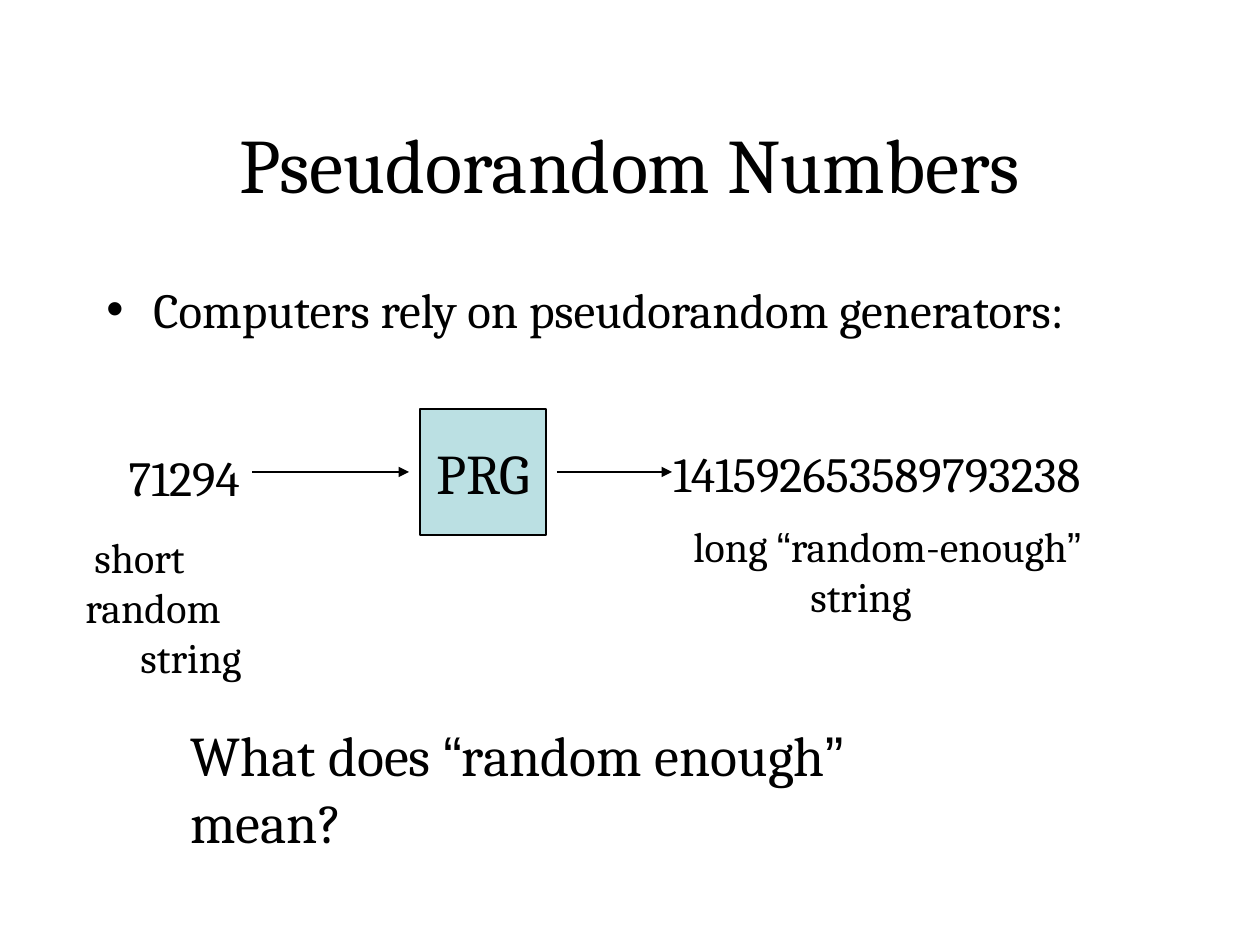
from dataclasses import dataclass
from itertools import groupby

from lxml.etree import SubElement
from pptx import Presentation
from pptx.dml.color import RGBColor
from pptx.enum.shapes import MSO_CONNECTOR, MSO_SHAPE
from pptx.enum.text import MSO_ANCHOR, PP_ALIGN
from pptx.oxml.ns import qn
from pptx.util import Emu, Inches, Pt

SCALE = Inches(10) / 1260


@dataclass(frozen=True)
class Theme:
    ink: RGBColor = RGBColor(0, 0, 0)
    generator_fill: RGBColor = RGBColor(0xBB, 0xE0, 0xE3)
    font: str = "Cambria"
    quote_font: str = "Arial"
    title: int = 44
    large: int = 32
    body: int = 28
    caption: int = 24
    line: float = 0.75


@dataclass(frozen=True)
class Area:
    left: int
    top: int
    width: int
    height: int


@dataclass(frozen=True)
class Line:
    text: str
    margin: int = 0
    indent: int = 0
    bullet: str = ""


@dataclass(frozen=True)
class Label:
    area: Area
    lines: tuple[Line, ...]
    size: int


@dataclass(frozen=True)
class Arrow:
    start: int
    end: int
    height: int


THEME = Theme()
TITLE = Label(Area(94, 84, 1072, 158), (Line("Pseudorandom Numbers"),), THEME.title)
LABELS = (
    Label(Area(94, 273, 1072, 94),
          (Line("Computers rely on pseudorandom generators:", 47, -47, "•"),), THEME.body),
    Label(Area(116, 441, 147, 72), (Line("71294"),), THEME.body),
    Label(Area(661, 437, 466, 72), (Line("141592653589793238"),), THEME.body),
    Label(Area(73, 525, 258, 113),
          (Line("short random", indent=9), Line("string", indent=55)), THEME.caption),
    Label(Area(672, 514, 440, 113),
          (Line("long “random-enough”", indent=9), Line("string", indent=126)), THEME.caption),
    Label(Area(178, 714, 837, 79), (Line("What does “random enough” mean?"),), THEME.large),
)
GENERATOR = Area(420, 409, 126, 126)
ARROWS = (Arrow(252, 409, 472), Arrow(557, 672, 472))


def px(length: int) -> Emu:
    return Emu(round(length * SCALE))


def place(area: Area) -> tuple[Emu, ...]:
    return px(area.left), px(area.top), px(area.width), px(area.height)


def write_text(para, text: str, *, size: int, align=PP_ALIGN.LEFT) -> None:
    para.alignment = align
    for quoted, letters in groupby(text, key=lambda letter: letter in "“”"):
        span = para.add_run()
        span.text = "".join(letters)
        span.font.name = THEME.quote_font if quoted else THEME.font
        span.font.size = Pt(size)
        span.font.color.rgb = THEME.ink


def indent_line(para, line: Line) -> None:
    properties = para._p.get_or_add_pPr()
    properties.set("marL", str(px(line.margin)))
    properties.set("indent", str(px(line.indent)))
    if line.bullet:
        SubElement(properties, qn("a:buFont"), typeface="Arial")
        SubElement(properties, qn("a:buChar"), char=line.bullet)


def add_label(page, label: Label, *, align=PP_ALIGN.LEFT, anchor=MSO_ANCHOR.TOP) -> None:
    frame = page.shapes.add_textbox(*place(label.area)).text_frame
    frame.word_wrap = True
    frame.vertical_anchor = anchor
    for index, line in enumerate(label.lines):
        para = frame.add_paragraph() if index else frame.paragraphs[0]
        write_text(para, line.text, size=label.size, align=align)
        indent_line(para, line)


def add_generator(page, area: Area) -> None:
    box = page.shapes.add_shape(MSO_SHAPE.RECTANGLE, *place(area))
    box.shadow.inherit = False
    box.fill.solid()
    box.fill.fore_color.rgb = THEME.generator_fill
    box.line.color.rgb = THEME.ink
    box.line.width = Pt(THEME.line)
    box.text_frame.word_wrap = False
    box.text_frame.vertical_anchor = MSO_ANCHOR.MIDDLE
    write_text(box.text_frame.paragraphs[0], "PRG", size=THEME.large, align=PP_ALIGN.CENTER)


def add_arrow(page, arrow: Arrow) -> None:
    connector = page.shapes.add_connector(
        MSO_CONNECTOR.STRAIGHT, px(arrow.start), px(arrow.height), px(arrow.end), px(arrow.height))
    connector.line.color.rgb = THEME.ink
    connector.line.width = Pt(THEME.line)
    SubElement(connector.line._get_or_add_ln(), qn("a:tailEnd"), type="triangle")
    SubElement(connector._element.spPr, qn("a:effectLst"))


def main() -> None:
    deck = Presentation()
    deck.slide_width, deck.slide_height = px(1260), px(945)
    page = deck.slides.add_slide(deck.slide_layouts[6])
    add_label(page, TITLE, align=PP_ALIGN.CENTER, anchor=MSO_ANCHOR.MIDDLE)
    add_generator(page, GENERATOR)
    for arrow in ARROWS:
        add_arrow(page, arrow)
    for label in LABELS:
        add_label(page, label)
    deck.save("out.pptx")


if __name__ == "__main__":
    main()
